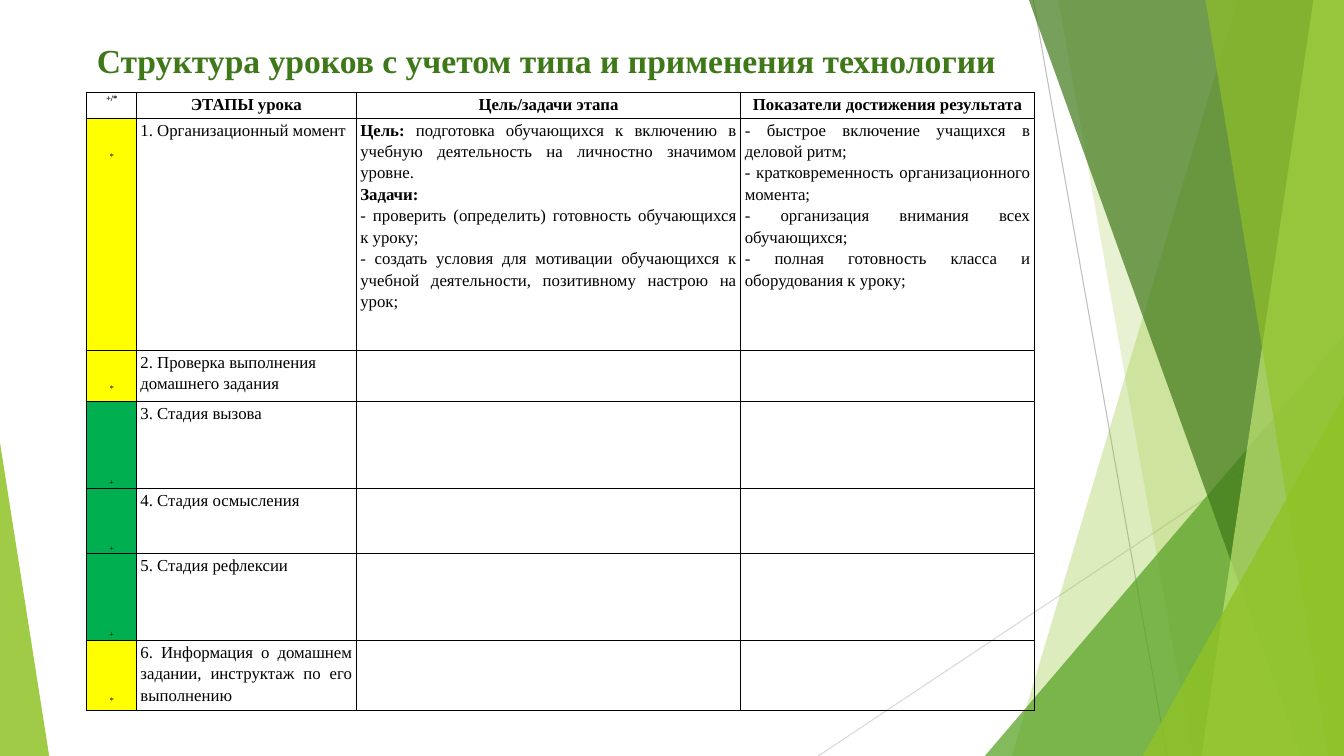
"""Build a slide with a table of lesson stages beside green facets."""
from lxml import etree
from pptx import Presentation
from pptx.dml.color import RGBColor
from pptx.enum.shapes import MSO_CONNECTOR, MSO_SHAPE
from pptx.enum.text import MSO_ANCHOR, PP_ALIGN
from pptx.oxml import parse_xml
from pptx.oxml.ns import nsdecls, qn
from pptx.util import Cm, Pt

STRAIGHT = MSO_CONNECTOR.STRAIGHT
TRIANGLE = MSO_SHAPE.ISOSCELES_TRIANGLE
TOP = MSO_ANCHOR.TOP
LEFT, CENTER, JUSTIFY = PP_ALIGN.LEFT, PP_ALIGN.CENTER, PP_ALIGN.JUSTIFY

FONT = "Times New Roman"
BLACK = RGBColor(0x00, 0x00, 0x00)
GRAY = RGBColor(0xBF, 0xBF, 0xBF)
LIGHT_GRAY = RGBColor(0xD9, 0xD9, 0xD9)
LIME = RGBColor(0x90, 0xC2, 0x26)
PALE_LIME = RGBColor(0xC0, 0xE4, 0x74)
GREEN = RGBColor(0x54, 0xA0, 0x21)
DARK_GREEN = RGBColor(0x3F, 0x78, 0x19)
YELLOW = RGBColor(0xFF, 0xFF, 0x00)
MARK_GREEN = RGBColor(0x00, 0xB0, 0x50)

WIDTH, HEIGHT = 33.87, 19.05
MARK_LINE = 0.27


def add_run(paragraph, text, size, bold=False, color=BLACK):
    run = paragraph.add_run()
    run.text = text
    run.font.name = FONT
    run.font.size = Pt(size)
    run.font.bold = bold
    run.font.color.rgb = color


def paint(facet, color, opacity):
    facet.shadow.inherit = False
    facet.line.fill.background()
    facet.fill.solid()
    facet.fill.fore_color.rgb = color
    tint = facet.fill._xPr.find(qn("a:solidFill"))[0]
    etree.SubElement(tint, qn("a:alpha"), val=str(opacity * 1000))


prs = Presentation()
prs.slide_width, prs.slide_height = Cm(WIDTH), Cm(HEIGHT)
slide = prs.slides.add_slide(prs.slide_layouts[6])
shapes = slide.shapes

for x1, y1, x2, color in [(26.04, 0, 29.41, GRAY), (WIDTH, 10.24, 20.62, LIGHT_GRAY)]:
    ray = shapes.add_connector(STRAIGHT, Cm(x1), Cm(y1), Cm(x2), Cm(HEIGHT))
    ray.line.color.rgb = color
    ray.line.width = Pt(0.75)
    etree.SubElement(ray._element.spPr, qn("a:effectLst"))

# Bands hold top and bottom x; triangles hold left, top, width and apex.
FACETS = [
    ((31.19, 25.5), LIME, 30),
    ((26.67, 30.05), LIME, 20),
    ((24.82, 8.46, 9.05, 1), GREEN, 72),
    ((25.93, 32.79), DARK_GREEN, 70),
    ((33.1, 30.28), PALE_LIME, 70),
    ((30.38, 33.48), LIME, 65),
    ((28.8, 9.98, 5.07, 1), LIME, 80),
    ((0, 11.15, 1.24, 0), LIME, 85),
]
for geometry, color, opacity in FACETS:
    if len(geometry) == 2:
        top_x, bottom_x = geometry
        outline = shapes.build_freeform(Cm(top_x), 0)
        corners = [(WIDTH, 0), (WIDTH, HEIGHT), (bottom_x, HEIGHT)]
        outline.add_line_segments([(Cm(x), Cm(y)) for x, y in corners], close=True)
        facet = outline.convert_to_shape()
    else:
        left, top, width, apex = geometry
        facet = shapes.add_shape(TRIANGLE, Cm(left), Cm(top), Cm(width), Cm(HEIGHT - top))
        facet.adjustments[0] = apex
    paint(facet, color, opacity)

title = shapes.add_textbox(Cm(2.19), Cm(0.89), Cm(23.88), Cm(1.65)).text_frame
title.word_wrap = True
title.vertical_anchor = TOP
add_run(title.paragraphs[0], "Структура уроков с учетом типа и применения технологии",
        24, True, DARK_GREEN)

HEADERS = ["+/*", "ЭТАПЫ урока", "Цель/задачи этапа", "Показатели достижения результата"]
STAGES = [
    ("*", 3, 5.85, "1. Организационный момент", JUSTIFY),
    ("*", 3, 1.29, "2. Проверка выполнения домашнего задания", LEFT),
    ("+", 7, 2.19, "3. Стадия вызова", JUSTIFY),
    ("+", 5, 1.64, "4. Стадия осмысления", JUSTIFY),
    ("+", 7, 2.19, "5. Стадия рефлексии", JUSTIFY),
    ("*", 5, 1.64, "6. Информация о домашнем задании, инструктаж по его выполнению", JUSTIFY),
]
MARK_FILLS = {"*": YELLOW, "+": MARK_GREEN}
GOALS = [
    [("Цель:", True), (" подготовка обучающихся к включению в учебную деятельность "
                       "на личностно значимом уровне.", False)],
    [("Задачи: ", True)],
    [("- проверить (определить) готовность обучающихся к уроку;", False)],
    [("- создать условия для мотивации обучающихся к учебной деятельности, "
      "позитивному настрою на урок;", False)],
]
RESULTS = [
    [("- быстрое включение учащихся в деловой ритм;", False)],
    [("- кратковременность организационного момента; ", False)],
    [("- организация внимания всех обучающихся;", False)],
    [("- полная готовность класса и оборудования к уроку;", False)],
]

contents = [[([[(header, True)]], CENTER) for header in HEADERS]]
for mark, _, _, stage, align in STAGES:
    contents.append([([[(mark, False)]], CENTER), ([[(stage, False)]], align),
                     ([], JUSTIFY), ([], JUSTIFY)])
contents[1][2:] = [(GOALS, JUSTIFY), (RESULTS, JUSTIFY)]

row_heights = [0.64] + [stage[2] for stage in STAGES]
column_widths = [1.25, 5.54, 9.69, 7.4]
lesson = shapes.add_table(len(row_heights), len(column_widths), Cm(2.19), Cm(2.34),
                          Cm(sum(column_widths)), Cm(sum(row_heights))).table
lesson.first_row = lesson.horz_banding = False
for column, width in zip(lesson.columns, column_widths):
    column.width = Cm(width)

for r, (row, height) in enumerate(zip(lesson.rows, row_heights)):
    row.height = Cm(height)
    for c, (paragraphs, align) in enumerate(contents[r]):
        cell = lesson.cell(r, c)
        cell.margin_left = cell.margin_right = Cm(0.1)
        cell.margin_top = cell.margin_bottom = 0
        cell.vertical_anchor = TOP
        for side in ("lnL", "lnR", "lnT", "lnB"):
            cell._tc.get_or_add_tcPr().append(parse_xml(
                f'<a:{side} {nsdecls("a")} w="12700"><a:solidFill>'
                f'<a:srgbClr val="{BLACK}"/></a:solidFill></a:{side}>'))
        cell.fill.background()
        if r and c == 0:
            mark, lines_above = STAGES[r - 1][:2]
            cell.margin_top = Cm(lines_above * MARK_LINE)
            cell.fill.solid()
            cell.fill.fore_color.rgb = MARK_FILLS[mark]
        for i, runs in enumerate(paragraphs):
            frame = cell.text_frame
            paragraph = frame.add_paragraph() if i else frame.paragraphs[0]
            paragraph.alignment = align
            paragraph.line_spacing = 1.15
            for text, bold in runs:
                add_run(paragraph, text, 12 if c else 6, bold)

prs.save("out.pptx")
